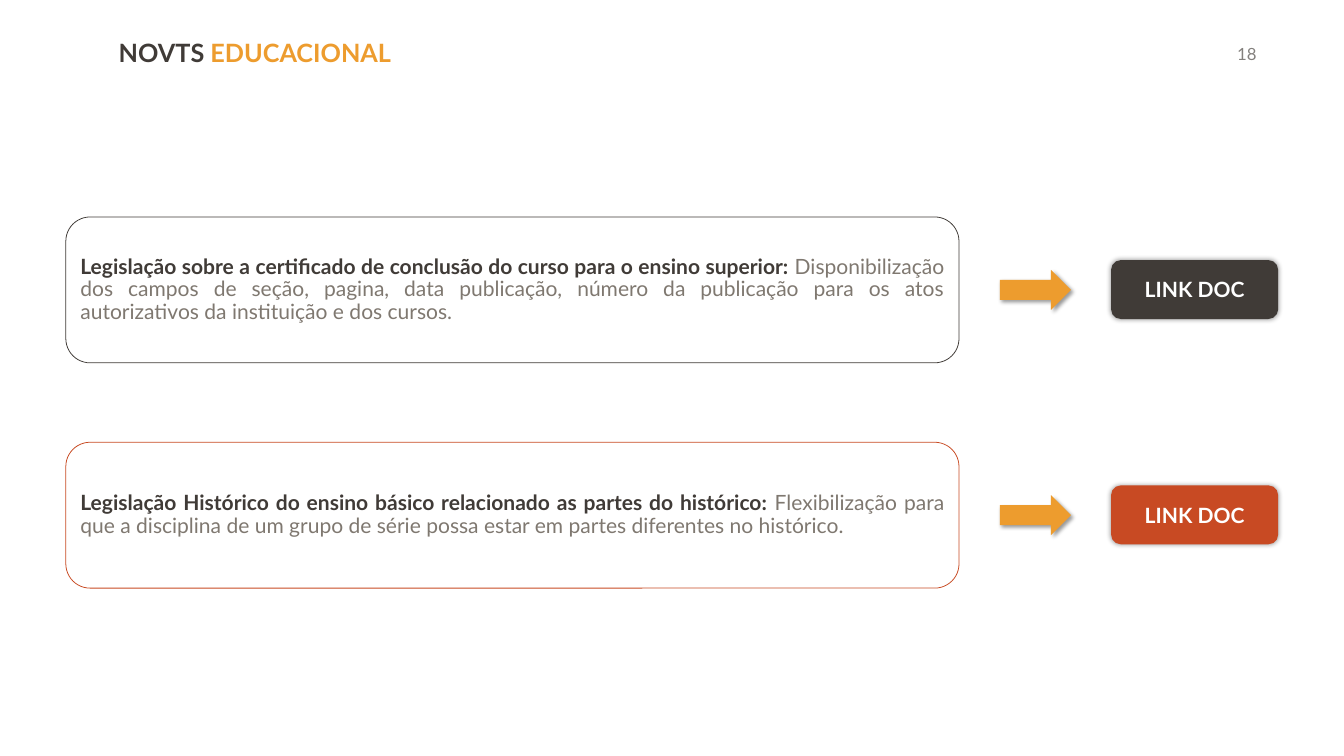
from lxml import etree
from pptx import Presentation
from pptx.dml.color import RGBColor
from pptx.enum.shapes import MSO_SHAPE
from pptx.enum.text import MSO_ANCHOR, PP_ALIGN
from pptx.oxml.ns import qn
from pptx.util import Inches, Pt

ROUNDED, ARROW = MSO_SHAPE.ROUNDED_RECTANGLE, MSO_SHAPE.RIGHT_ARROW
MIDDLE = MSO_ANCHOR.MIDDLE
LEFT, CENTER, JUSTIFY = PP_ALIGN.LEFT, PP_ALIGN.CENTER, PP_ALIGN.JUSTIFY
COLORS = {"dark": "403B37", "orange": "ED9C2E", "red": "C84A23",
          "gray": "7F7870", "number": "83807D", "white": "FFFFFF"}


def write(shape, runs, size, align):
    tf = shape.text_frame
    tf.vertical_anchor = MIDDLE
    p = tf.paragraphs[0]
    p.alignment = align
    for text, color, bold in runs:
        r = p.add_run()
        r.text = text
        for name, value in {"name": "Lato", "size": Pt(size), "bold": bold}.items():
            setattr(r.font, name, value)
        r.font.color.rgb = RGBColor.from_string(COLORS[color])
    return p


def add_filled(kind, left, top, width, height, color, blur, dist, angle):
    shape = s.shapes.add_shape(kind, Inches(left), Inches(top), Inches(width), Inches(height))
    shape.fill.solid()
    shape.fill.fore_color.rgb = RGBColor.from_string(COLORS[color])
    shape.line.fill.background()
    shape.shadow.inherit = False
    effects = shape.element.spPr.find(qn("a:effectLst"))
    shadow = etree.SubElement(effects, qn("a:outerShdw"), blurRad=str(Pt(blur)),
                              dist=str(Pt(dist)), dir=str(angle * 60000),
                              algn="ctr", rotWithShape="0")
    rgb = etree.SubElement(shadow, qn("a:srgbClr"), val="000000")
    etree.SubElement(rgb, qn("a:alpha"), val="40000")
    return shape


prs = Presentation()
prs.slide_width, prs.slide_height = Inches(17.77), Inches(10)
s = prs.slides.add_slide(prs.slide_layouts[5])

title = s.shapes.title
place = {"left": 1.47, "top": 0.44, "width": 14.36, "height": 0.51}
for name, value in place.items():
    setattr(title, name, Inches(value))
write(title, [("NOVTS ", "dark", True), ("EDUCACIONAL", "orange", True)], 24, LEFT)

number = s.shapes.add_textbox(Inches(16.26), Inches(0.52), Inches(0.61), Inches(0.37))
write(number, [("18", "number", False)], 16, LEFT)

items = [
    ("dark", "Legislação sobre a certificado de conclusão do curso para o ensino superior: ",
     "Disponibilização dos campos de seção, pagina, data publicação, número da publicação "
     "para os atos autorizativos da instituição e dos cursos."),
    ("red", "Legislação Histórico do ensino básico relacionado as partes do histórico: ",
     "Flexibilização para que a disciplina de um grupo de série possa estar em partes "
     "diferentes no histórico."),
]
for i, (color, heading, detail) in enumerate(items):
    top = 2.87 + i * 2.98
    box = s.shapes.add_shape(ROUNDED, Inches(0.87), Inches(top), Inches(11.81), Inches(1.93))
    box.fill.background()
    box.line.color.rgb = RGBColor.from_string(COLORS[color])
    box.line.width = Pt(0.75)
    box.shadow.inherit = False
    p = write(box, [(heading, "dark", True), (detail, "gray", False)], 20, JUSTIFY)
    p.line_spacing = 0.9

    add_filled(ARROW, 13.22, top + 0.7, 0.94, 0.53, "orange", 4, 3, 45)
    button = add_filled(ROUNDED, 14.69, top + 0.57, 2.21, 0.78, color, 5, 0, 0)
    write(button, [("LINK DOC", "white", True)], 20, CENTER)

prs.save("out.pptx")
